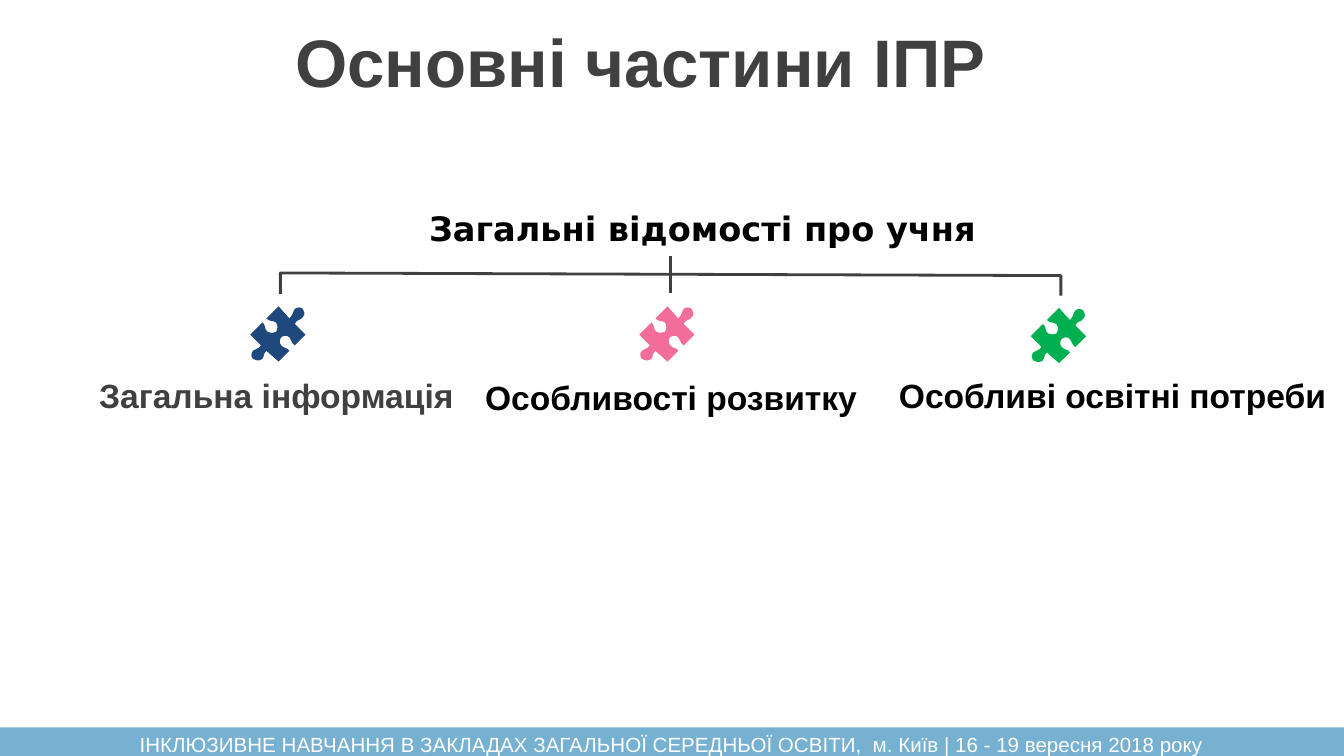
from dataclasses import dataclass

from lxml.etree import SubElement
from pptx import Presentation
from pptx.dml.color import RGBColor
from pptx.enum.shapes import MSO_CONNECTOR, MSO_SHAPE
from pptx.enum.text import MSO_ANCHOR, PP_ALIGN
from pptx.oxml.ns import qn
from pptx.util import Cm, Pt


@dataclass(frozen=True)
class Theme:
    grey: str = "404040"
    black: str = "000000"
    white: str = "FFFFFF"
    footer: str = "76B1D1"
    navy: str = "1F497D"
    pink: str = "F26D9A"
    green: str = "00B050"
    title_size: int = 36
    label_size: int = 18
    footer_size: int = 11
    line_width: float = 1.5
    font: str = "Arial"
    root_font: str = "DejaVu Sans"


THEME = Theme()

# Puzzle outline around its centre, on a grid of -21 to 21:
# one point is a straight line's end, three are a Bézier curve
PUZZLE_START = (18, -19)
PUZZLE_STEPS = [
    [(19, -17), (20, -15), (18, -13)], [(16, -10), (14, -12), (12, -8)],
    [(20, 0)], [(12, 8)],
    [(9, 6), (10, 4), (8, 2)], [(6, 0), (3, 1), (2, 2)],
    [(1, 3), (0, 6), (2, 8)], [(5, 11), (6, 9), (8, 12)],
    [(0, 20)], [(-9, 12)],
    [(-12, 15), (-10, 15), (-12, 18)], [(-15, 20), (-17, 19), (-19, 18)],
    [(-20, 17), (-21, 14), (-19, 12)], [(-17, 10), (-15, 11), (-13, 8)],
    [(-21, 0)], [(-12, -9)],
    [(-9, -7), (-11, -4), (-8, -2)], [(-6, -1), (-4, -1), (-2, -2)],
    [(-1, -3), (0, -7), (-2, -9)], [(-5, -11), (-6, -9), (-9, -12)],
    [(0, -21)], [(8, -12)],
    [(11, -15), (10, -16), (12, -19)], [(14, -21), (17, -20), (18, -19)],
]
PUZZLE_SPAN = 42


def color(code):
    return RGBColor.from_string(code)


def write_text(shape, text, size, ink, font=THEME.font, bold=True,
               align=PP_ALIGN.CENTER, wrap=True, anchor=MSO_ANCHOR.TOP):
    frame = shape.text_frame
    for name, value in {"word_wrap": wrap, "vertical_anchor": anchor}.items():
        setattr(frame, name, value)
    para = frame.paragraphs[0]
    para.alignment = align
    span = para.add_run()
    span.text = text
    for name, value in {"name": font, "size": Pt(size), "bold": bold}.items():
        setattr(span.font, name, value)
    span.font.color.rgb = color(ink)
    return para


def add_text(page, box, text, size, ink, **formats):
    shape = page.shapes.add_textbox(*map(Cm, box))
    return write_text(shape, text, size, ink, **formats)


def add_outline(parent, points, close):
    first, *rest = [(Cm(x), Cm(y)) for x, y in points]
    builder = parent.shapes.build_freeform(*first)
    builder.add_line_segments(rest, close=close)
    shape = builder.convert_to_shape()
    shape.shadow.inherit = False
    return shape


def bend(shape, steps):
    """Merge the three lines of each curved step into one Bézier curve."""
    lines = iter(list(shape._element.iter(qn("a:lnTo"))))
    for step in steps:
        curve, *others = [next(lines) for _ in step]
        if others:
            curve.tag = qn("a:cubicBezTo")
        for line in others:
            curve.append(line[0])
            line.getparent().remove(line)


def style_line(shape):
    shape.line.color.rgb = color(THEME.grey)
    shape.line.width = Pt(THEME.line_width)


def add_title(page, box, text):
    title = page.shapes.title
    for name, value in zip(("left", "top", "width", "height"), box):
        setattr(title, name, Cm(value))
    write_text(title, text, THEME.title_size, THEME.grey, anchor=MSO_ANCHOR.MIDDLE)


def add_bracket(page, box):
    left, top, width, height = box
    right, bottom = left + width, top + height
    group = page.shapes.add_group_shape()
    # Crossbar with its two drops, tilted very slightly
    bar = top + 0.33
    bracket = add_outline(group, [(left, bottom + 0.02), (left, bar),
                                  (right, bar + 0.05), (right, bottom + 0.05)], False)
    bracket.fill.background()
    style_line(bracket)
    # Stem through the middle
    middle = left + width / 2
    stem = group.shapes.add_connector(MSO_CONNECTOR.STRAIGHT, Cm(middle), Cm(top),
                                      Cm(middle), Cm(bottom))
    style_line(stem)
    SubElement(stem._element.spPr, qn("a:effectLst"))


def add_puzzle(page, box, fill):
    left, top, side = box
    scale = side / PUZZLE_SPAN
    grid = [PUZZLE_START] + [point for step in PUZZLE_STEPS for point in step]
    piece = add_outline(page, [(left + side / 2 + x * scale, top + side / 2 + y * scale)
                               for x, y in grid], True)
    bend(piece, PUZZLE_STEPS)
    piece.fill.solid()
    piece.fill.fore_color.rgb = color(fill)
    piece.line.fill.background()


def add_branch(page, box, text, ink, fill, piece_left, piece_top, **formats):
    add_puzzle(page, (piece_left, piece_top, 1.07), fill)
    add_text(page, box, text, THEME.label_size, ink, **formats)


def add_footer(page, box, text):
    left, top, width, height = box
    band = page.shapes.add_shape(MSO_SHAPE.RECTANGLE, *map(Cm, box))
    band.shadow.inherit = False
    band.fill.solid()
    band.fill.fore_color.rgb = color(THEME.footer)
    band.line.fill.background()
    para = add_text(page, (left, top - 0.11, width, 0.76), text,
                    THEME.footer_size, THEME.white, bold=False)
    for name, value in {"line_spacing": 1.15, "space_after": Pt(10)}.items():
        setattr(para, name, value)


def main():
    deck = Presentation()
    deck.slide_width, deck.slide_height = Cm(25.4), Cm(14.29)
    page = deck.slides.add_slide(deck.slide_layouts[5])

    add_title(page, (2.3, 0.06, 19.61, 2.16), "Основні частини ІПР")

    # Root of the tree
    add_bracket(page, (5.3, 4.83, 14.75, 0.71))
    add_text(page, (7.86, 3.81, 10.95, 1.8), "Загальні відомості про учня",
             THEME.label_size, THEME.black, font=THEME.root_font,
             align=PP_ALIGN.LEFT, wrap=False)

    # Three branches
    loose = {"align": PP_ALIGN.LEFT, "wrap": False}
    add_branch(page, (1.53, 6.97, 7.39, 1.02), "Загальна інформація",
               THEME.grey, THEME.navy, 4.73, 5.79)
    add_branch(page, (8.92, 7.0, 7.62, 1.02), "Особливості розвитку",
               THEME.black, THEME.pink, 12.08, 5.79, **loose)
    add_branch(page, (16.74, 6.97, 8.66, 1.02), "Особливі освітні потреби",
               THEME.black, THEME.green, 19.48, 5.82, **loose)

    add_footer(page, (0, 13.75, 25.4, 0.54),
               "ІНКЛЮЗИВНЕ НАВЧАННЯ В ЗАКЛАДАХ ЗАГАЛЬНОЇ СЕРЕДНЬОЇ ОСВІТИ,  "
               "м. Київ | 16 - 19 вересня 2018 року")
    deck.save("out.pptx")


if __name__ == "__main__":
    main()
